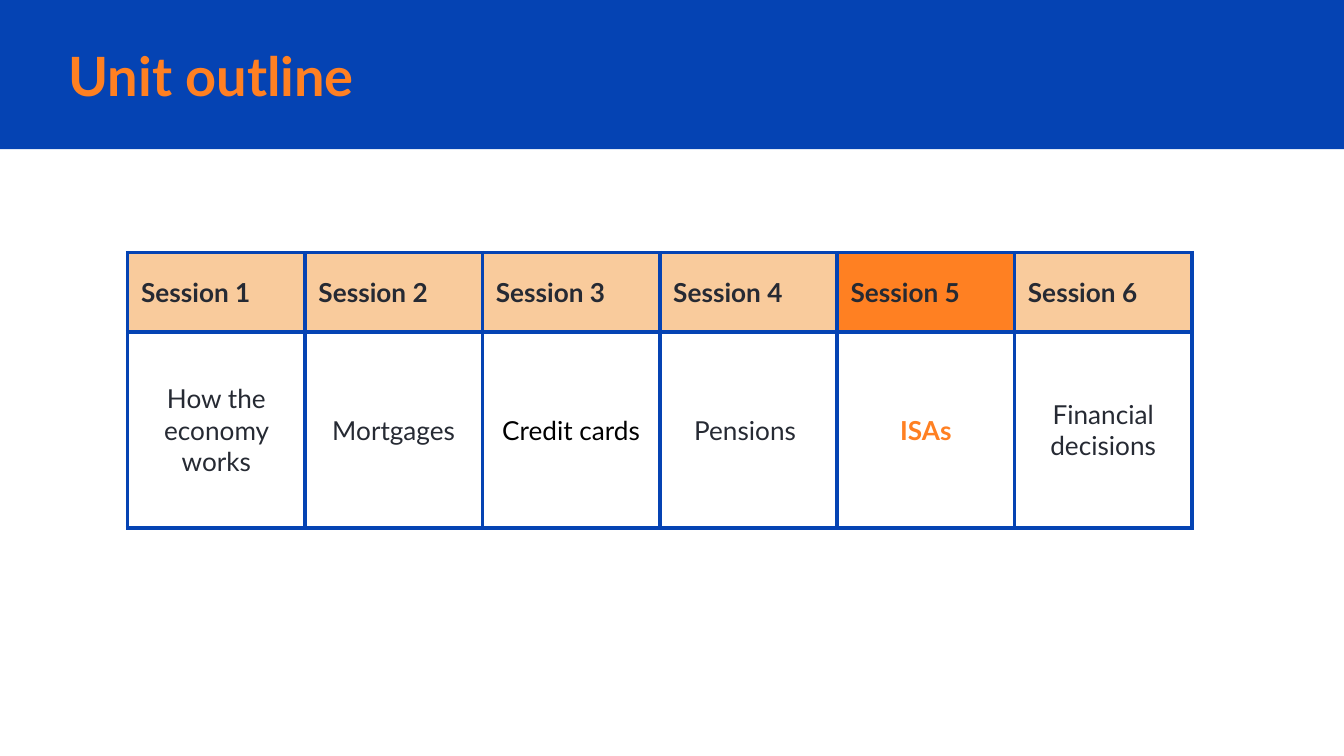
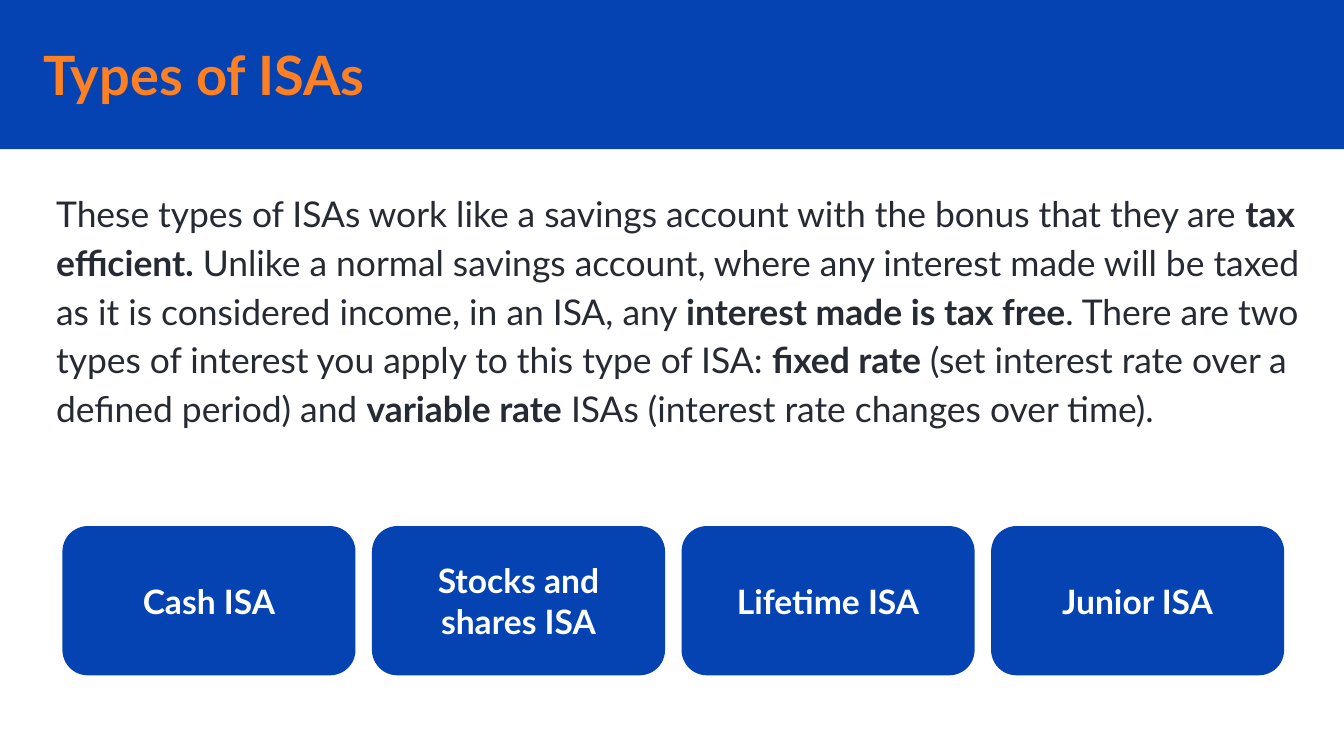
from lxml import etree
from pptx import Presentation, util as u
from pptx.dml.color import RGBColor
from pptx.enum import shapes, text
from pptx.oxml.ns import qn

BLUE = RGBColor(0x05, 0x43, 0xB3)
ORANGE = RGBColor(0xFF, 0x80, 0x22)
PEACH = RGBColor(0xF9, 0xCB, 0x9C)
INK = RGBColor(0x26, 0x2A, 0x33)
BLACK = RGBColor(0, 0, 0)
WHITE = RGBColor(0xFF, 0xFF, 0xFF)

FONT = "Lato"
WIDTH = u.Inches(10)
HEIGHT = WIDTH * 9 // 16
BAND_HEIGHT = u.Inches(1.11)
LEFT, CENTER = text.PP_ALIGN.LEFT, text.PP_ALIGN.CENTER
MIDDLE, TOP = text.MSO_ANCHOR.MIDDLE, text.MSO_ANCHOR.TOP

SESSIONS = ["How the economy works", "Mortgages", "Credit cards",
            "Pensions ", "ISAs", "Financial decisions"]
CURRENT = "ISAs"
ISA_TYPES = ["Cash ISA", "Stocks and shares ISA", "Lifetime ISA", "Junior ISA"]
ISA_TEXT = (
    "These types of ISAs work like a savings account with the bonus that they "
    "are **tax efficient.** Unlike a normal savings account, where any interest "
    "made will be taxed as it is considered income, in an ISA, any **interest "
    "made is tax free**. There are two types of interest you apply to this type "
    "of ISA: **fixed rate** (set interest rate over a defined period) and "
    "**variable rate** ISAs (interest rate changes over time).")


def write(tf, words, size, color, bold=False, align=LEFT, spacing=None):
    """Fill a text frame; parts between ** marks are bold."""
    p = tf.paragraphs[0]
    p.alignment = align
    if spacing:
        p.line_spacing = spacing
    for i, part in enumerate(words.split("**")):
        r = p.add_run()
        r.text = part
        r.font.name, r.font.size = FONT, u.Pt(size)
        r.font.bold = bold or i % 2 == 1
        r.font.color.rgb = color


def set_frame(tf, anchor):
    tf.word_wrap = True
    tf.auto_size = text.MSO_AUTO_SIZE.NONE
    tf.vertical_anchor = anchor
    tf.margin_left = tf.margin_right = u.Inches(0.1)
    tf.margin_top = tf.margin_bottom = u.Inches(0.1)


def add_block(slide, kind, left, top, width, height):
    sp = slide.shapes.add_shape(kind, left, top, width, height)
    sp.shadow.inherit = False
    sp.fill.solid()
    sp.fill.fore_color.rgb = BLUE
    sp.line.color.rgb = BLUE
    sp.line.width = u.Pt(0.75)
    return sp


def add_band_to_layout(prs, layout):
    """Put the title band on the layout, behind its title."""
    for ph in list(layout.placeholders):
        if ph.placeholder_format.type != shapes.PP_PLACEHOLDER.TITLE:
            ph.element.getparent().remove(ph.element)
    band = add_block(prs.slides[0], shapes.MSO_SHAPE.RECTANGLE,
                     0, 0, WIDTH, BAND_HEIGHT)
    band.line.fill.background()
    layout.shapes.element.insert(2, band.element)


def set_title(slide, words, left, top):
    sp = slide.shapes.title
    sp.left, sp.top = left, top
    sp.width, sp.height = u.Inches(8.46), u.Inches(0.56)
    set_frame(sp.text_frame, MIDDLE)
    write(sp.text_frame, words, 29, ORANGE, bold=True)


def set_borders(cell, color, width):
    props = cell._tc.get_or_add_tcPr()
    for i, side in enumerate(("lnL", "lnR", "lnT", "lnB")):
        ln = etree.Element(qn(f"a:{side}"), w=str(u.Pt(width)))
        fill = etree.SubElement(ln, qn("a:solidFill"))
        etree.SubElement(fill, qn("a:srgbClr"), val=str(color))
        props.insert(i, ln)


def fill_cell(cell, words, fill, margin, **style):
    cell.vertical_anchor = MIDDLE
    cell.margin_left = cell.margin_right = u.Inches(margin)
    cell.margin_top = cell.margin_bottom = u.Inches(margin)
    cell.fill.solid()
    cell.fill.fore_color.rgb = fill
    set_borders(cell, BLUE, 2.25)
    write(cell.text_frame, words, 14, **style)


def add_session_table(slide):
    heights = [u.Inches(0.59), u.Inches(1.46)]
    column = u.Inches(1.32)
    table = slide.shapes.add_table(
        2, len(SESSIONS), u.Inches(0.95), u.Inches(1.88),
        column * len(SESSIONS), sum(heights)).table
    table.first_row = table.horz_banding = False
    for row, height in zip(table.rows, heights):
        row.height = height
    topic_colors = {CURRENT: ORANGE, "Credit cards": BLACK}
    for i, topic in enumerate(SESSIONS):
        current = topic == CURRENT
        fill_cell(table.cell(0, i), f"Session {i + 1}",
                  ORANGE if current else PEACH, 0.1, color=INK, bold=True)
        fill_cell(table.cell(1, i), topic, WHITE, 0.07, bold=current,
                  color=topic_colors.get(topic, INK), align=CENTER)


def add_paragraph_box(slide, words):
    box = slide.shapes.add_textbox(u.Inches(0.32), u.Inches(1.28),
                                   u.Inches(9.54), u.Inches(2.28))
    set_frame(box.text_frame, TOP)
    write(box.text_frame, words, 19, INK, spacing=1.15)


def add_button_row(slide, labels):
    first, last = u.Inches(0.47), u.Inches(7.38)
    pitch = (last - first) // (len(labels) - 1)
    for i, label in enumerate(labels):
        sp = add_block(slide, shapes.MSO_SHAPE.ROUNDED_RECTANGLE,
                       first + i * pitch, u.Inches(3.92),
                       u.Inches(2.17), u.Inches(1.1))
        set_frame(sp.text_frame, MIDDLE)
        write(sp.text_frame, label, 18, WHITE, bold=True, align=CENTER)


def main():
    prs = Presentation()
    prs.slide_width, prs.slide_height = WIDTH, HEIGHT
    layout = prs.slide_layouts.get_by_name("Title Only")

    outline = prs.slides.add_slide(layout)
    add_band_to_layout(prs, layout)
    set_title(outline, "Unit outline", u.Inches(0.41), u.Inches(0.28))
    add_session_table(outline)

    types = prs.slides.add_slide(layout)
    set_title(types, "Types of ISAs", u.Inches(0.22), u.Inches(0.27))
    add_paragraph_box(types, ISA_TEXT)
    add_button_row(types, ISA_TYPES)

    prs.save("out.pptx")


if __name__ == "__main__":
    main()
